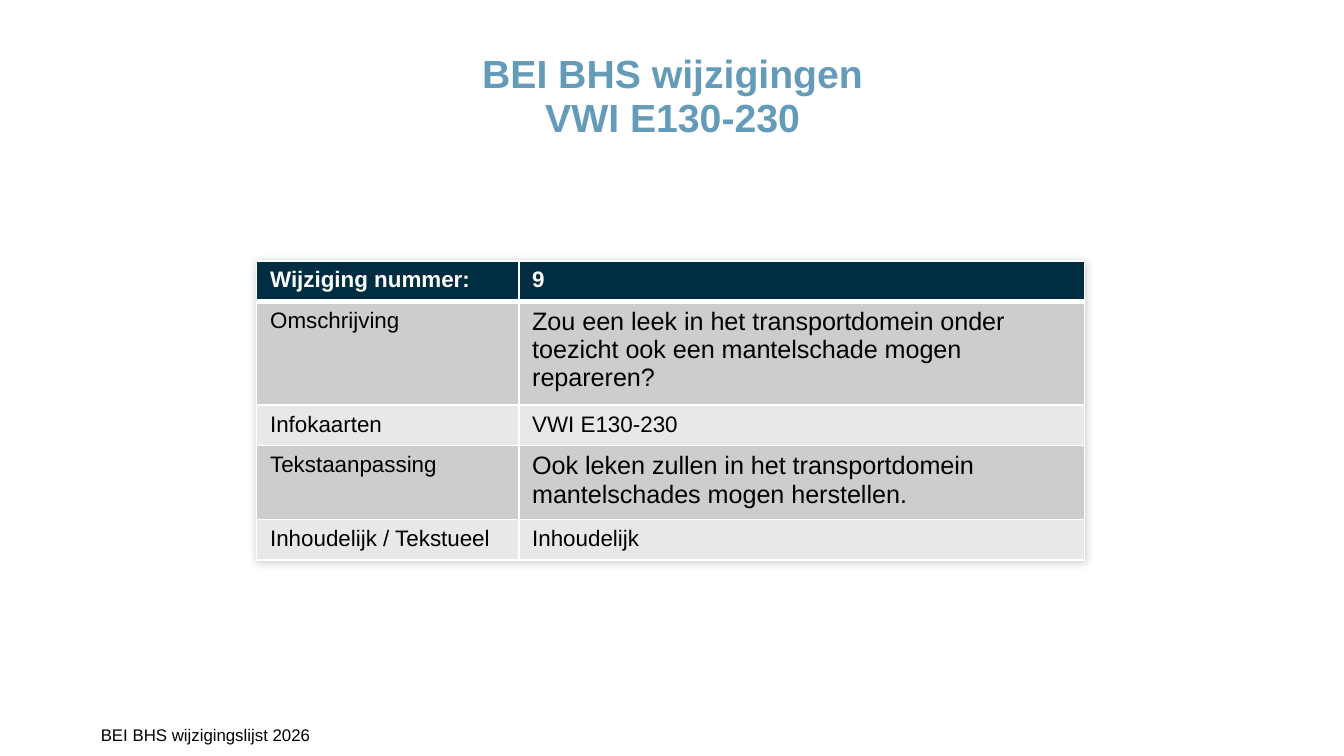
import dataclasses
import typing

import pptx
import pptx.dml.color
import pptx.enum.text
import pptx.oxml
import pptx.oxml.ns
import pptx.util

Inches = pptx.util.Inches
Pt = pptx.util.Pt
RGB = pptx.dml.color.RGBColor.from_string


@dataclasses.dataclass(frozen=True)
class Theme:
    font: str = "Arial"
    title: str = "649BB9"
    header: str = "002D41"
    dark_band: str = "CCCDCF"
    light_band: str = "E7E8E9"
    text: str = "000000"
    white: str = "FFFFFF"
    title_size: float = 21
    body_size: float = 12
    long_size: float = 13.5
    footer_size: float = 9


class Row(typing.NamedTuple):
    label: str
    value: str
    height: float = 0.3
    value_size: float = Theme.body_size


class Label(typing.NamedTuple):
    text: str
    box: tuple[float, float, float, float]
    size: float
    color: str
    bold: bool = False
    align: typing.Any = pptx.enum.text.PP_ALIGN.LEFT
    spacing: float = 1.0
    indent: float = 0


THEME = Theme()
TABLE_LEFT, TABLE_TOP = 1.91, 1.94
COLUMNS = (1.95, 4.21)

ROWS = (
    Row("Wijziging nummer:", "9"),
    Row("Omschrijving", "Zou een leek in het transportdomein onder toezicht "
        "ook een mantelschade mogen repareren?", 0.73, THEME.long_size),
    Row("Infokaarten", "VWI E130-230"),
    Row("Tekstaanpassing", "Ook leken zullen in het transportdomein "
        "mantelschades mogen herstellen.", 0.52, THEME.long_size),
    Row("Inhoudelijk / Tekstueel", "Inhoudelijk"),
)

LABELS = (
    Label("BEI BHS wijzigingen\vVWI E130-230", (1.91, 0.39, 6.19, 0.94),
          THEME.title_size, THEME.title, True,
          pptx.enum.text.PP_ALIGN.CENTER, 0.95),
    Label("BEI BHS wijzigingslijst 2026", (0, 5.39, 4.72, 0.24),
          THEME.footer_size, THEME.text, indent=0.75),
)


def format_runs(p, size: float, color: str, bold: bool) -> None:
    for r in p.runs:
        r.font.name = THEME.font
        r.font.size = Pt(size)
        r.font.bold = bold
        r.font.color.rgb = RGB(color)


def add_label(s, label: Label) -> None:
    sp = s.shapes.add_textbox(*map(Inches, label.box))
    tf = sp.text_frame
    tf.word_wrap = True
    tf.margin_top = tf.margin_right = tf.margin_bottom = 0
    tf.margin_left = Inches(label.indent)
    p = tf.paragraphs[0]
    p.text = label.text
    p.alignment = label.align
    p.line_spacing = label.spacing
    format_runs(p, label.size, label.color, label.bold)


def set_borders(cell, top: float, bottom: float) -> None:
    widths = {"L": 1, "R": 1, "T": top, "B": bottom}
    for i, (side, width) in enumerate(widths.items()):
        line = pptx.oxml.parse_xml(
            f'<a:ln{side} {pptx.oxml.ns.nsdecls("a")} w="{Pt(width)}">'
            f'<a:solidFill><a:srgbClr val="{THEME.white}"/></a:solidFill>'
            f'</a:ln{side}>')
        cell._tc.get_or_add_tcPr().insert(i, line)


def add_shadow(table) -> None:
    shadow = pptx.oxml.parse_xml(
        f'<a:effectLst {pptx.oxml.ns.nsdecls("a")}>'
        f'<a:outerShdw blurRad="{Pt(5)}" dist="{Pt(1)}" dir="5400000">'
        f'<a:srgbClr val="{THEME.text}"><a:alpha val="20000"/></a:srgbClr>'
        '</a:outerShdw></a:effectLst>')
    table._tbl.tblPr.insert(0, shadow)


def fill_cell(cell, text: str, size: float, row: int) -> None:
    is_header = row == 0
    band = THEME.dark_band if row % 2 else THEME.light_band
    cell.fill.solid()
    cell.fill.fore_color.rgb = RGB(THEME.header if is_header else band)
    cell.text_frame.text = text
    format_runs(cell.text_frame.paragraphs[0], size,
                THEME.white if is_header else THEME.text, is_header)
    # A thick rule separates the header from the body
    set_borders(cell, top=3 if row == 1 else 1, bottom=3 if is_header else 1)


def add_change_table(s, rows: tuple[Row, ...]) -> None:
    height = sum(row.height for row in rows)
    frame = s.shapes.add_table(
        len(rows), len(COLUMNS), Inches(TABLE_LEFT), Inches(TABLE_TOP),
        Inches(sum(COLUMNS)), Inches(height))
    table = frame.table
    add_shadow(table)
    for column, width in zip(table.columns, COLUMNS):
        column.width = Inches(width)
    for i, row in enumerate(rows):
        table.rows[i].height = Inches(row.height)
        fill_cell(table.cell(i, 0), row.label, THEME.body_size, i)
        fill_cell(table.cell(i, 1), row.value, row.value_size, i)


def main() -> None:
    prs = pptx.Presentation()
    # Widescreen, 16:9
    prs.slide_width = Inches(10)
    prs.slide_height = Inches(10 * 9 / 16)
    s = prs.slides.add_slide(prs.slide_layouts[6])

    # Title
    title, footer = LABELS
    add_label(s, title)

    # Table of the change
    add_change_table(s, ROWS)

    # Footer
    add_label(s, footer)

    prs.save("out.pptx")


if __name__ == "__main__":
    main()
